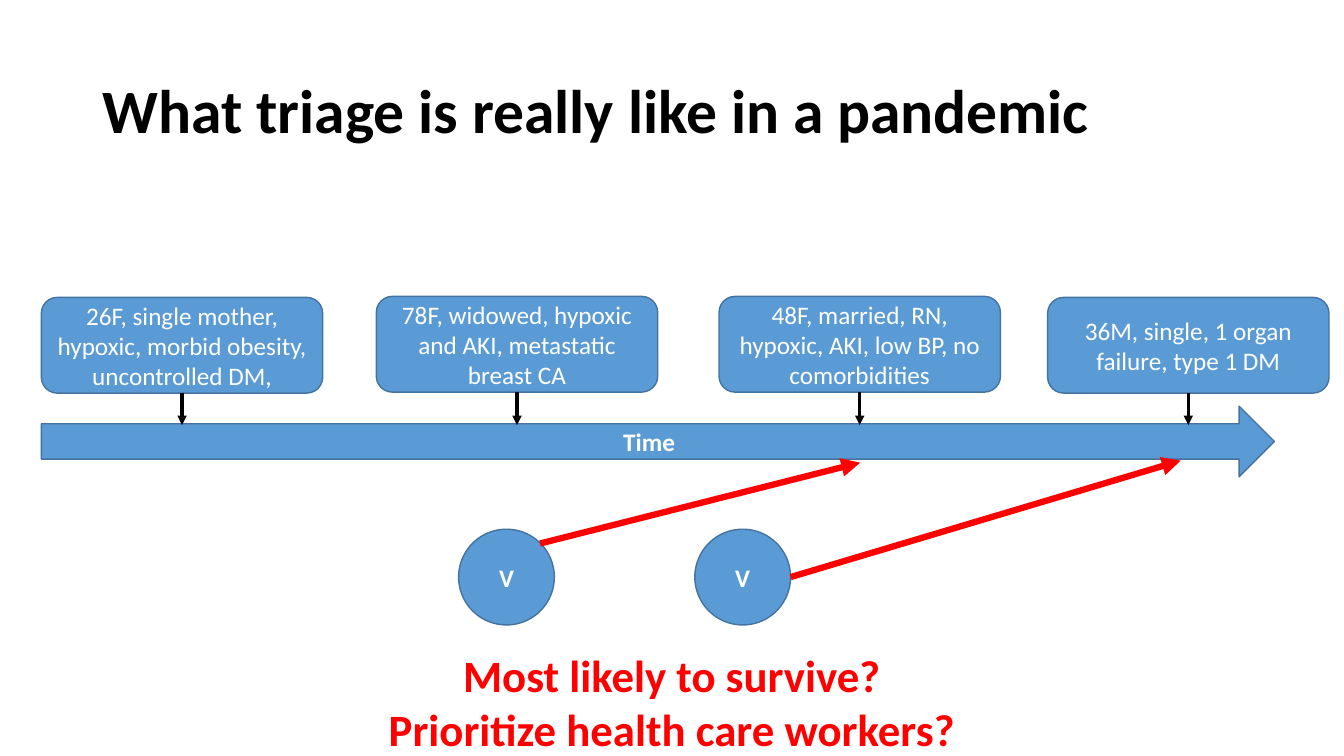
from dataclasses import dataclass

from lxml import etree
from pptx import Presentation
from pptx.dml.color import RGBColor
from pptx.enum.shapes import MSO_CONNECTOR, MSO_SHAPE
from pptx.enum.text import MSO_ANCHOR, PP_ALIGN
from pptx.oxml.ns import qn
from pptx.util import Inches, Pt

STRAIGHT = MSO_CONNECTOR.STRAIGHT
ROUND_RECT = MSO_SHAPE.ROUNDED_RECTANGLE
RIGHT_ARROW = MSO_SHAPE.RIGHT_ARROW
OVAL = MSO_SHAPE.OVAL
MIDDLE = MSO_ANCHOR.MIDDLE
LEFT, CENTER = PP_ALIGN.LEFT, PP_ALIGN.CENTER
TITLE_ONLY = 5
BOTTOM = 2
COLS, ROWS = 80, 45


@dataclass(frozen=True)
class Theme:
    font: str = "Calibri"
    fill: RGBColor = RGBColor(0x5B, 0x9B, 0xD5)
    outline: RGBColor = RGBColor(0x43, 0x73, 0x9E)
    light: RGBColor = RGBColor(0xFF, 0xFF, 0xFF)
    dark: RGBColor = RGBColor(0, 0, 0)
    accent: RGBColor = RGBColor(0xFF, 0, 0)
    title_size: int = 44
    question_size: int = 32
    label_size: int = 18


class SlideBuilder:
    """Places elements on a slide by columns and rows of an 80 x 45 grid."""

    def __init__(self, prs, theme):
        self.theme = theme
        self.col = prs.slide_width / COLS
        self.row = prs.slide_height / ROWS
        self.slide = prs.slides.add_slide(prs.slide_layouts[TITLE_ONLY])

    def place(self, x, y, w, h):
        return (*self.point(x, y), *self.point(w, h))

    def point(self, x, y):
        return round(x * self.col), round(y * self.row)

    def set_text(self, tf, lines, size, color, bold=True, align=CENTER):
        tf.text = "\n".join(lines)
        for p in tf.paragraphs:
            p.alignment = align
            p.font.name = self.theme.font
            p.font.size = Pt(size)
            p.font.bold = bold
            p.font.color.rgb = color

    def title(self, text, *box):
        sp = self.slide.shapes.title
        sp.left, sp.top, sp.width, sp.height = self.place(*box)
        tf = sp.text_frame
        tf.vertical_anchor = MIDDLE
        self.set_text(tf, [text], self.theme.title_size, self.theme.dark, align=LEFT)
        tf.paragraphs[0].line_spacing = 0.9

    def shape(self, kind, text, *box, bold=True):
        sp = self.slide.shapes.add_shape(kind, *self.place(*box))
        sp.shadow.inherit = False
        sp.fill.solid()
        sp.fill.fore_color.rgb = self.theme.fill
        sp.line.color.rgb = self.theme.outline
        sp.line.width = Pt(1)
        tf = sp.text_frame
        tf.word_wrap = True
        tf.vertical_anchor = MIDDLE
        self.set_text(tf, [text], self.theme.label_size, self.theme.light, bold)
        return sp

    def text(self, lines, *box):
        tf = self.slide.shapes.add_textbox(*self.place(*box)).text_frame
        tf.word_wrap = False
        self.set_text(tf, lines, self.theme.question_size, self.theme.accent)

    def arrow(self, start, end, color, width):
        line = self.slide.shapes.add_connector(
            STRAIGHT, *self.point(*start), *self.point(*end))
        line.line.color.rgb = color
        line.line.width = Pt(width)
        props = line._element.spPr
        etree.SubElement(props.find(qn("a:ln")), qn("a:tailEnd"), type="triangle")
        etree.SubElement(props, qn("a:effectLst"))
        return line


def main():
    prs = Presentation()
    prs.slide_width, prs.slide_height = Inches(13.33), Inches(7.5)
    theme = Theme()
    s = SlideBuilder(prs, theme)

    s.title("What triage is really like in a pandemic", 5.5, 2.4, 69, 8.7)
    s.shape(RIGHT_ARROW, "Time", 2.46, 24.18, 73.4, 4.2)

    card_w, card_h, timeline_y = 16.75, 5.7, 25.3
    patients = [
        (2.46, 17.7, "26F, single mother, hypoxic, morbid obesity, uncontrolled DM,"),
        (22.4, 17.64, "78F, widowed, hypoxic and AKI, metastatic breast CA"),
        (42.8, 17.64, "48F, married, RN, hypoxic, AKI, low BP, no comorbidities"),
        (62.36, 17.7, "36M, single, 1 organ failure, type 1 DM"),
    ]
    for x, y, text in patients:
        card = s.shape(ROUND_RECT, text, x, y, card_w, card_h, bold=False)
        middle = x + card_w / 2
        arrow = s.arrow((middle, y + card_h), (middle, timeline_y), theme.dark, 2.25)
        arrow.begin_connect(card, BOTTOM)

    ventilator_y, ventilator_d = 31.5, 5.7
    # Left edge, start of the arrow as shares of the circle, end of the arrow
    ventilators = [
        (27.3, (0.85, 0.15), (51.2, 27.54)),
        (41.36, (1, 0.5), (70.28, 27.42)),
    ]
    for x, (across, down), target in ventilators:
        s.shape(OVAL, "V", x, ventilator_y, ventilator_d, ventilator_d)
        start = (x + across * ventilator_d, ventilator_y + down * ventilator_d)
        s.arrow(start, target, theme.accent, 4.5)

    s.text(["Most likely to survive?", "Prioritize health care workers?"],
           22.4, 38.28, 35.2, 7.1)
    prs.save("out.pptx")


if __name__ == "__main__":
    main()
